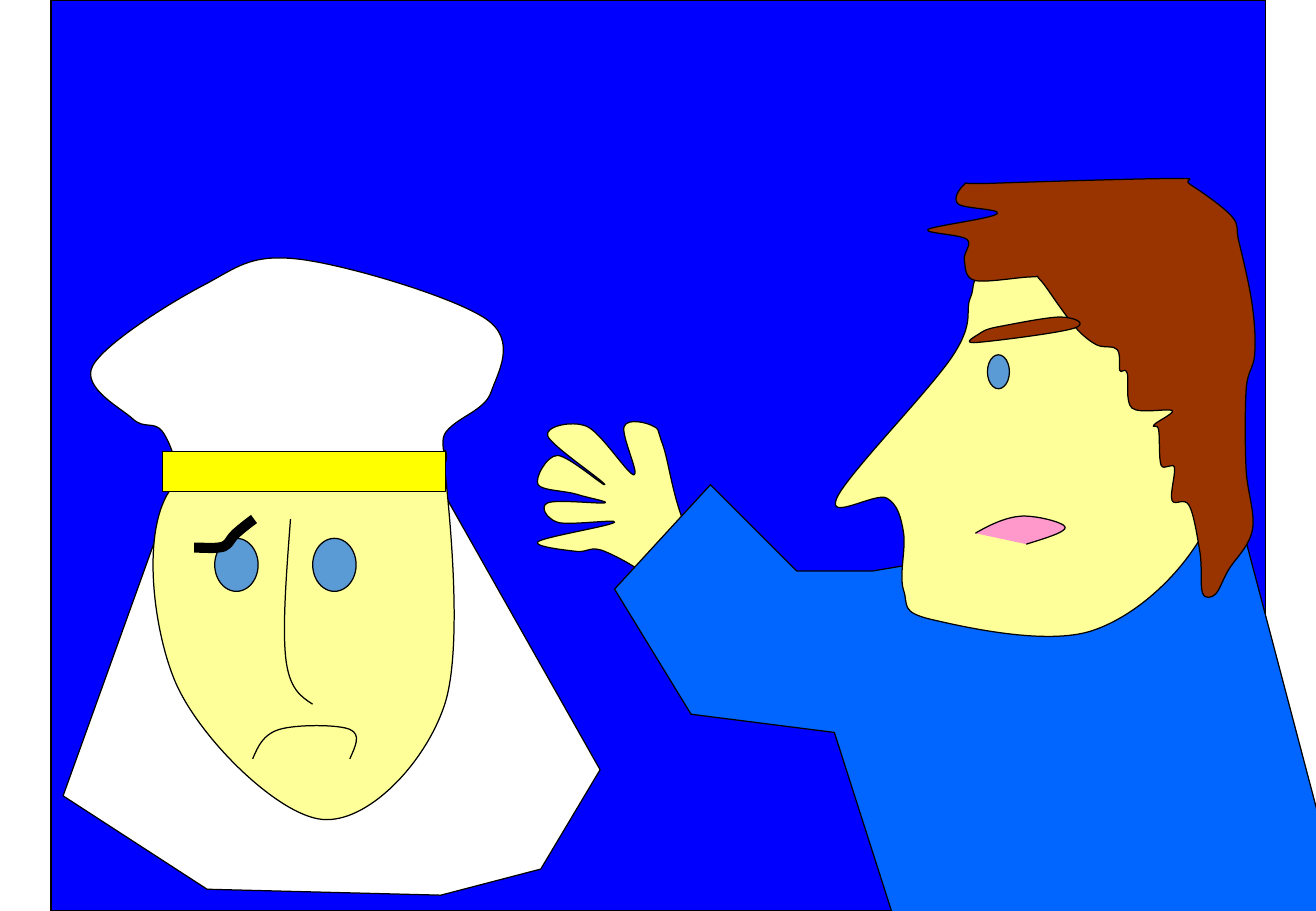
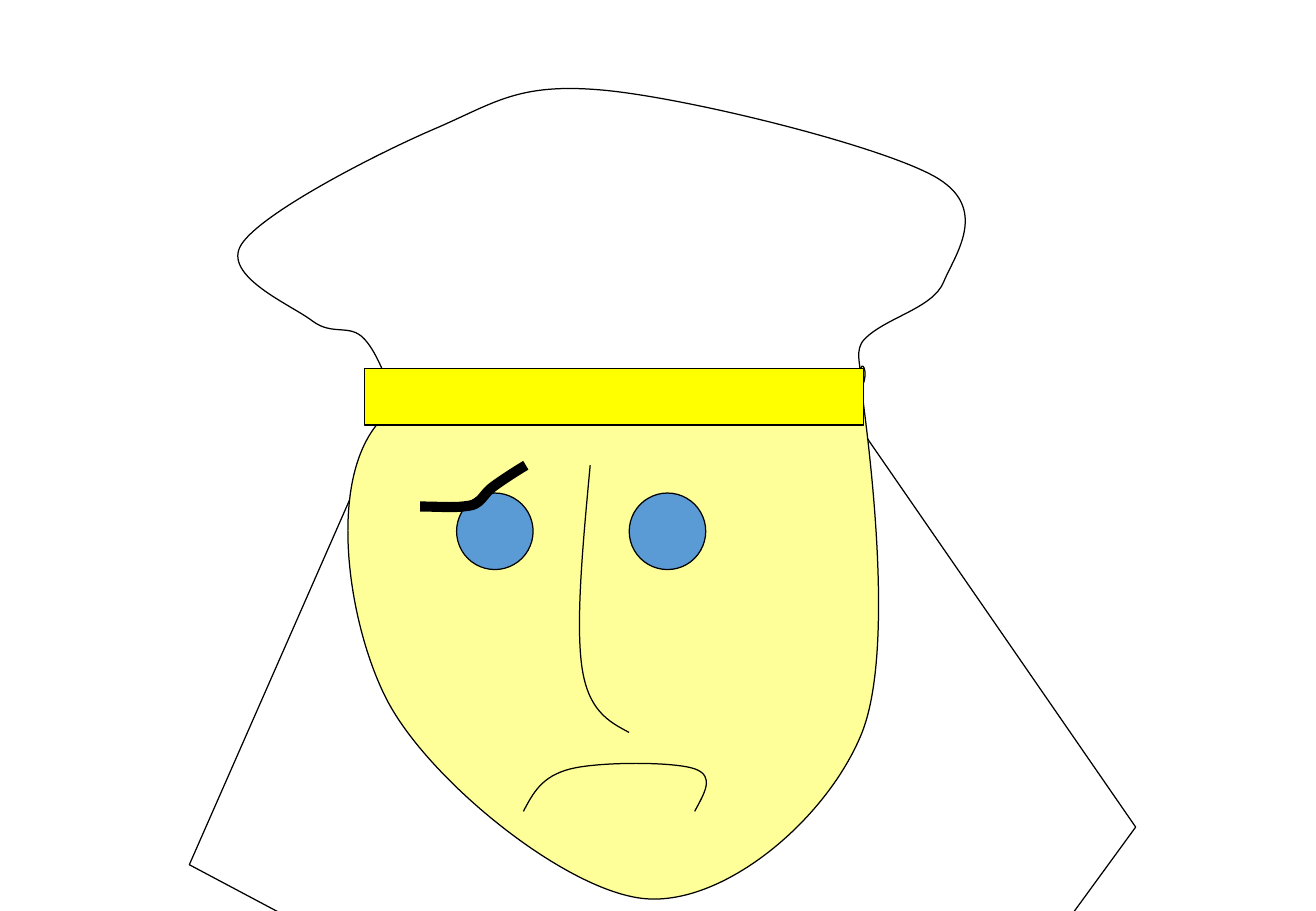
from pptx import Presentation
from pptx.dml.color import RGBColor
from pptx.enum.shapes import MSO_SHAPE
from pptx.oxml.ns import qn
from pptx.oxml.xmlchemy import OxmlElement
from pptx.util import Cm, Pt

RECTANGLE = MSO_SHAPE.RECTANGLE
OVAL = MSO_SHAPE.OVAL

BLACK = RGBColor(0x00, 0x00, 0x00)
WHITE = RGBColor(0xFF, 0xFF, 0xFF)
BLUE = RGBColor(0x00, 0x00, 0xFF)
SHIRT_BLUE = RGBColor(0x00, 0x66, 0xFF)
EYE_BLUE = RGBColor(0x5B, 0x9B, 0xD5)
SKIN = RGBColor(0xFF, 0xFF, 0x99)
YELLOW = RGBColor(0xFF, 0xFF, 0x00)
BROWN = RGBColor(0x99, 0x33, 0x00)
PINK = RGBColor(0xFF, 0x99, 0xCC)

# Outlines list the points they pass through, in hundredths of an inch.
UNIT = Cm(2.54) / 100

CLOAK = [(322, 334), (156, 712), (365, 823), (704, 830), (849, 799),
         (935, 681), (690, 326)]
HAT = [(307, 358), (668, 342), (712, 279), (777, 232), (769, 145), (495, 74),
       (358, 106), (199, 201), (257, 264), (300, 279), (329, 342)]
BAKER_FACE = [(325, 336), (318, 575), (532, 740), (709, 605), (709, 318),
              (672, 336)]
NOSE = [(486, 383), (479, 548), (518, 603)]
FROWN = [(431, 668), (470, 633), (572, 633), (572, 668)]
BAKER_BROW = [(433, 383), (407, 400), (394, 413), (381, 417), (346, 417)]

HAND = [(766, 509), (672, 509), (577, 454), (546, 367), (538, 351), (514, 351),
        (522, 391), (483, 351), (451, 359), (498, 399), (459, 375), (443, 399),
        (475, 407), (498, 414), (451, 414), (459, 430), (506, 430), (443, 446),
        (475, 454), (498, 454), (546, 485), (601, 548), (711, 572), (774, 824),
        (861, 840), (1057, 840), (1010, 517), (947, 462), (790, 477)]
SHIRT = [(585, 399), (506, 485), (569, 588), (687, 603), (798, 950),
         (1136, 863), (1026, 446), (861, 446), (719, 470), (656, 470)]
PROFILE = [(785, 292), (689, 410), (730, 410), (744, 439), (744, 486),
           (767, 510), (900, 519), (996, 429), (1015, 278), (923, 184),
           (817, 221), (799, 245)]
HAIR = [(856, 230), (870, 249), (885, 269), (903, 284), (920, 288), (922, 305),
        (928, 307), (932, 336), (965, 338), (950, 350), (954, 354), (956, 383),
        (967, 385), (965, 412), (979, 416), (988, 455), (990, 488), (1001, 489),
        (1011, 470), (1031, 437), (1026, 387), (1026, 321), (1033, 292),
        (1031, 251), (1020, 199), (1014, 178), (980, 152), (965, 147),
        (815, 151), (794, 152), (789, 168), (821, 176), (764, 189), (796, 197),
        (794, 214), (803, 231), (849, 228)]
MAN_BROW = [(804, 282), (885, 270), (873, 261), (822, 269), (806, 275)]
LIPS = [(803, 439), (840, 425), (877, 434), (845, 448)]


def paint(shape, fill=None, weight=0.75):
    shape.shadow.inherit = False
    if fill is None:
        shape.fill.background()
    else:
        shape.fill.solid()
        shape.fill.fore_color.rgb = fill
    shape.line.color.rgb = BLACK
    shape.line.width = Pt(weight)


def add_outline(shapes, points, fill=None, weight=0.75, curved=True, close=False):
    """Draw a freeform; a curved one is a smooth Bézier line through the points."""
    count = len(points)
    stops = points[1:]
    if curved:
        # A handle lies a sixth of the way between a point's two neighbours.
        stops = []
        for index in range(count if close else count - 1):
            start, end = points[index], points[(index + 1) % count]
            before, after = points[index - 1], points[(index + 2) % count]
            leave = [start[axis] + (end[axis] - before[axis]) / 6 for axis in (0, 1)]
            arrive = [end[axis] - (after[axis] - start[axis]) / 6 for axis in (0, 1)]
            if not close and index == 0:
                leave = [(start[axis] + arrive[axis]) / 2 for axis in (0, 1)]
            if not close and index == count - 2:
                arrive = [(end[axis] + leave[axis]) / 2 for axis in (0, 1)]
            stops += [leave, arrive, end]
    builder = shapes.build_freeform(*points[0], scale=UNIT)
    builder.add_line_segments(stops, close=close)
    shape = builder.convert_to_shape()
    paint(shape, fill, weight)
    if curved:
        segments = list(shape._element.iter(qn("a:lnTo")))
        for first in range(0, len(stops), 3):
            curve = OxmlElement("a:cubicBezTo")
            segments[first].addprevious(curve)
            for segment in segments[first:first + 3]:
                curve.append(segment[0])
                segment.getparent().remove(segment)


deck = Presentation()
deck.slide_width, deck.slide_height = Cm(27.52), Cm(19.05)
blank = deck.slide_layouts[6]
scene_page = deck.slides.add_slide(blank)
portrait_page = deck.slides.add_slide(blank)

backdrop = scene_page.shapes.add_shape(RECTANGLE, Cm(1.07), 0, Cm(25.4), Cm(19.05))
paint(backdrop, BLUE)

# The baker is drawn at portrait size; the group frame scales it.
baker_frames = [
    (scene_page, (1.32, 5.31, 11.23, 13.41)),
    (portrait_page, (3.96, 1.73, 19.79, 19.35)),
]
for page, frame in baker_frames:
    baker = page.shapes.add_group_shape()
    add_outline(baker.shapes, CLOAK, WHITE, curved=False, close=True)
    add_outline(baker.shapes, HAT, WHITE)
    add_outline(baker.shapes, BAKER_FACE, SKIN, close=True)
    hat_band = baker.shapes.add_shape(RECTANGLE, Cm(7.62), Cm(7.7), Cm(10.44), Cm(1.19))
    paint(hat_band, YELLOW)
    for left in (9.55, 13.16):
        eye = baker.shapes.add_shape(OVAL, Cm(left), Cm(10.31), Cm(1.6), Cm(1.6))
        paint(eye, EYE_BLUE)
    add_outline(baker.shapes, NOSE)
    add_outline(baker.shapes, FROWN)
    add_outline(baker.shapes, BAKER_BROW, weight=6)
    baker.left, baker.top, baker.width, baker.height = [Cm(length) for length in frame]

man = scene_page.shapes.add_group_shape()
add_outline(man.shapes, HAND, SKIN, close=True)
add_outline(man.shapes, SHIRT, SHIRT_BLUE, curved=False, close=True)
for points, fill in ((PROFILE, SKIN), (HAIR, BROWN), (MAN_BROW, BROWN)):
    add_outline(man.shapes, points, fill, close=True)
add_outline(man.shapes, LIPS, PINK)
man_eye = man.shapes.add_shape(OVAL, Cm(20.65), Cm(7.42), Cm(0.46), Cm(0.71))
paint(man_eye, EYE_BLUE)

deck.save("out.pptx")
